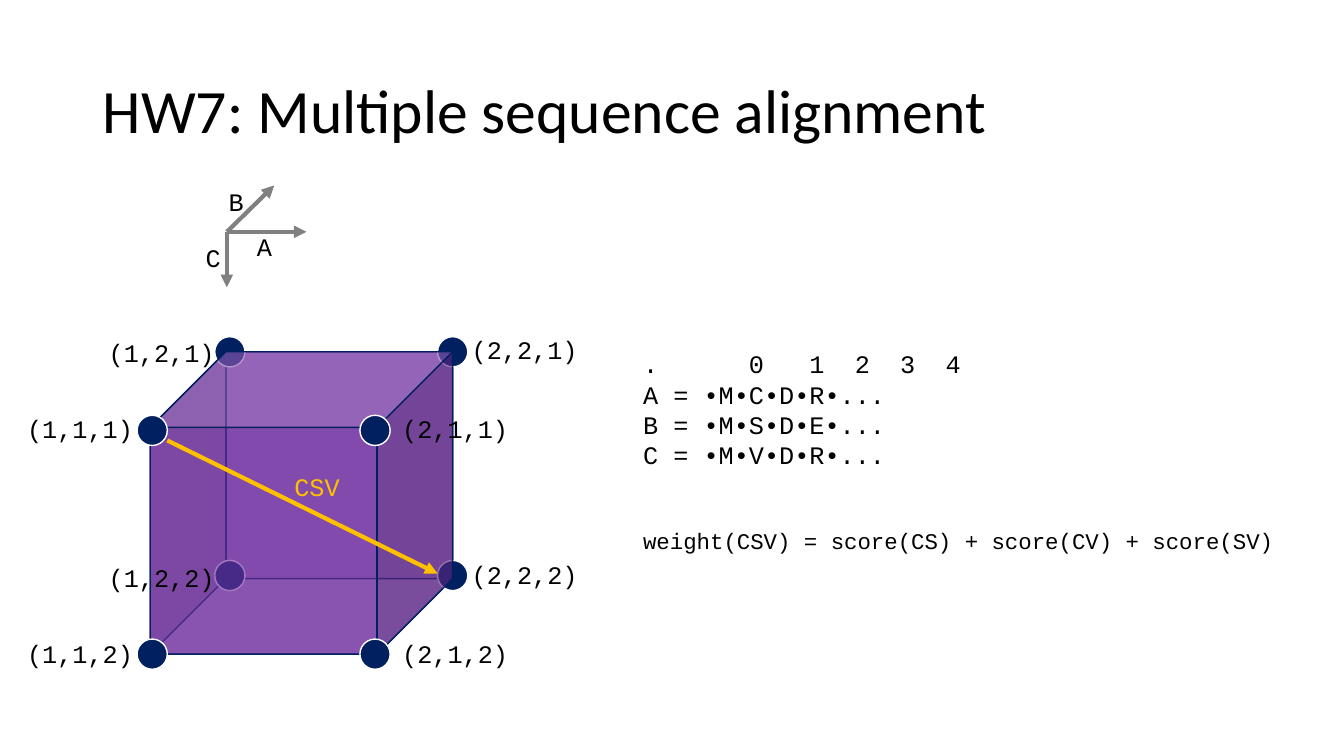
from pptx import Presentation
from pptx.dml.color import RGBColor as RGB
from pptx.enum.shapes import MSO_CONNECTOR as LINE, MSO_SHAPE as SHAPE
from pptx.enum.text import MSO_ANCHOR as ANCHOR
from pptx.oxml.ns import qn
from pptx.util import Pt
from lxml.etree import SubElement as Sub

HUES = {"ink": "000000", "navy": "002060", "plum": "7030A0",
        "white": "FFFFFF", "gray": "808080", "gold": "FFC000"}
PX = 9144


class Slide:
    """Draws styled elements on one slide, measured in px of 1/100 inch."""

    def __init__(self, deck):
        self.page = deck.slides.add_slide(deck.slide_layouts[6])
        self.shapes = self.page.shapes
        self.font = {"name": "Courier New", "size": Pt(18)}

    def hue(self, name):
        return RGB.from_string(HUES[name])

    def size(self, *nums):
        return [n * PX for n in nums]

    def form(self, kind, box, fill, edge, alpha=None, turn=0, host=None):
        shape = (host or self.page).shapes.add_shape(kind, *self.size(*box))
        shape.shadow.inherit = False
        shape.rotation = turn
        shape.fill.solid()
        shape.fill.fore_color.rgb = self.hue(fill)
        shape.line.color.rgb = self.hue(edge)
        shape.line.width = Pt(1)
        if alpha:
            tint = shape.fill._xPr.find(".//" + qn("a:srgbClr"))
            Sub(tint, qn("a:alpha"), val=str(alpha * 1000))

    def dots(self, left, top):
        group = self.shapes.add_group_shape()
        for x in (left, left + 221):
            for y in (top, top + 222):
                self.form(SHAPE.OVAL, (x, y, 30, 30), "navy", "white", host=group)

    def cube(self, turn):
        self.form(SHAPE.CUBE, (149, 349, 300, 300), "plum", "navy", 64, turn)

    def arrow(self, start, end, hue):
        line = self.shapes.add_connector(LINE.STRAIGHT, *self.size(*start, *end))
        line.line.color.rgb = self.hue(hue)
        line.line.width = Pt(3)
        Sub(line.line._get_or_add_ln(), qn("a:tailEnd"), type="triangle")
        Sub(line._element.spPr, qn("a:effectLst"))

    def text(self, box, rows, hue="ink", **style):
        frame = self.shapes.add_textbox(*self.size(*box)).text_frame
        frame.word_wrap = True
        for i, row in enumerate(rows):
            para = frame.add_paragraph() if i else frame.paragraphs[0]
            run = para.add_run()
            run.text = row
            run.font.color.rgb = self.hue(hue)
            for key, val in {**self.font, **style}.items():
                setattr(run.font, key, val)
        return frame

    def stops(self, para, cols):
        tabs = Sub(para._p.get_or_add_pPr(), qn("a:tabLst"))
        for col in cols:
            Sub(tabs, qn("a:tab"), pos=str(Pt(10.8 * col)), algn="l")


def main():
    deck = Presentation()
    deck.slide_width, deck.slide_height = 1333 * PX, 750 * PX
    slide = Slide(deck)

    slide.cube(180)
    title = slide.text((92, 40, 1150, 145), ["HW7: Multiple sequence alignment"],
                       name="Calibri", size=Pt(44))
    title.vertical_anchor = ANCHOR.MIDDLE
    title.paragraphs[0].line_spacing = 0.9
    slide.dots(213, 334)
    slide.cube(0)
    slide.dots(136, 412)

    for name, end, spot in (("A", (304, 230), (245, 225)),
                            ("B", (272, 184), (217, 180)),
                            ("C", (225, 285), (194, 235))):
        slide.arrow((225, 230), end, "gray")
        slide.text((*spot, 41, 40), [name])

    rows = [".\t0\t1\t2\t3\t4", "A = •M•C•D•R•...", "B = •M•S•D•E•...",
            "C = •M•V•D•R•...", "weight(CSV) = score(CS) + score(CV) + score(SV)"]
    paras = slide.text((628, 341, 705, 300), rows).paragraphs
    slide.stops(paras[0], (7, 11, 14, 17, 20))
    paras[-1].space_before = Pt(41)
    paras[-1].runs[0].font.size = Pt(16)

    for a, b, x, y in ((1, 1, 17, 405), (2, 1, 389, 405),
                       (2, 2, 458, 327), (1, 2, 98, 330)):
        for c in (1, 2):
            slide.text((x, y + 223 * (c - 1), 132, 40), [f"({a},{b},{c})"])

    slide.arrow((166, 437), (434, 569), "gold")
    slide.text((282, 463, 88, 40), ["CSV"], "gold")
    deck.save("out.pptx")


if __name__ == "__main__":
    main()
